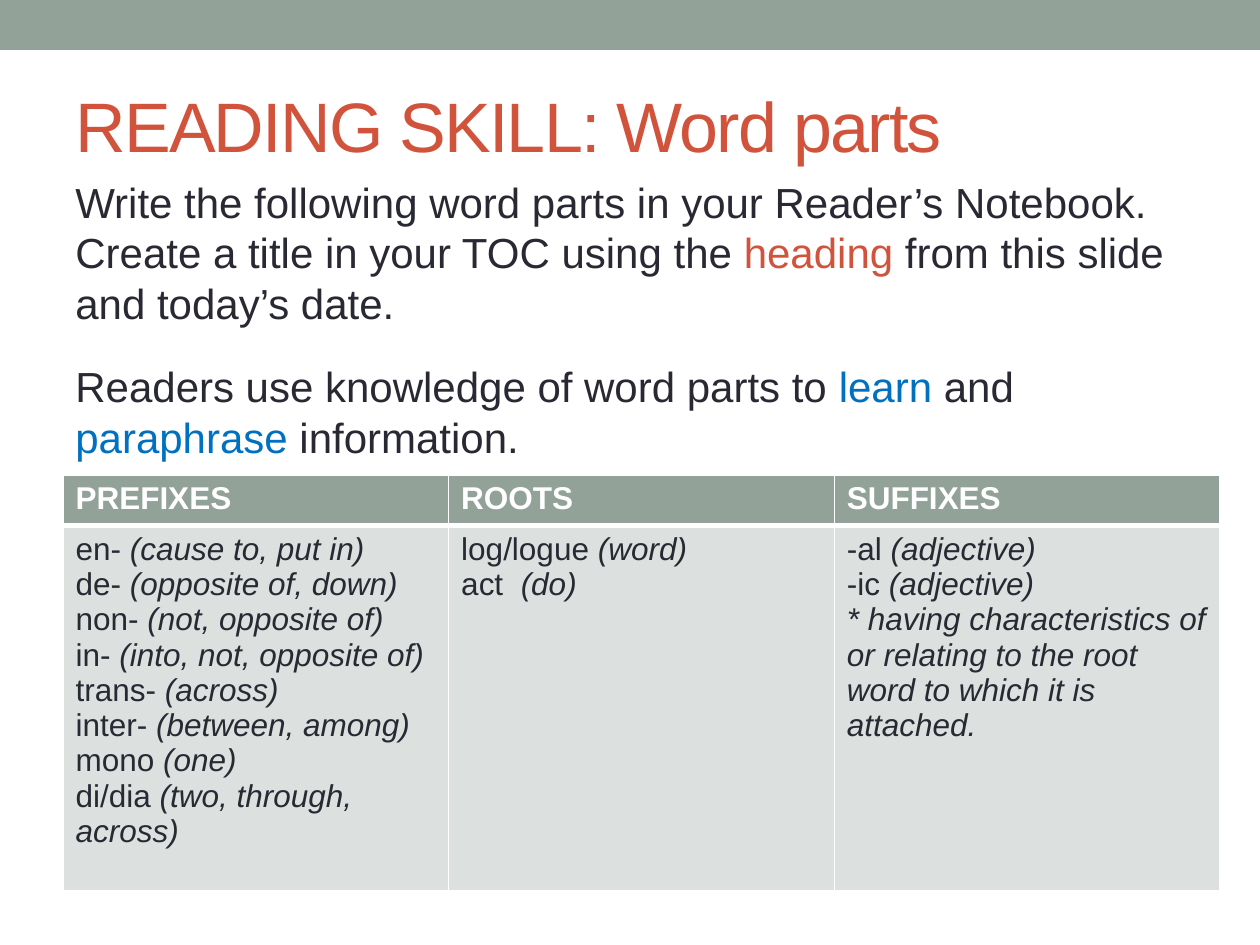
from lxml import etree
from pptx import Presentation
from pptx import util as u
from pptx.dml.color import RGBColor
from pptx.enum import shapes, text
from pptx.oxml import ns

PX = 914400 / 126
SAGE = RGBColor(0x93, 0xA2, 0x99)
PALE = RGBColor(0xDC, 0xE0, 0xDE)
RED = RGBColor(0xD2, 0x53, 0x3C)
BLUE = RGBColor(0x00, 0x70, 0xC0)
INK = RGBColor(0x29, 0x29, 0x34)
WHITE = RGBColor(0xFF, 0xFF, 0xFF)

INTRO = [
    [("Write the following word parts in your Reader’s Notebook.  "
      "Create a title in your TOC using the ", INK),
     ("heading", RED), (" from this slide and today’s date.", INK)],
    [("Readers use knowledge of word parts to ", INK), ("learn", BLUE),
     (" and ", INK), ("paraphrase", BLUE), (" information.", INK)],
]
WORD_PARTS = {
    "PREFIXES": [
        ("en- ", "(cause to, put in)"),
        ("de- ", "(opposite of, down)"),
        ("non- ", "(not, opposite of)"),
        ("in- ", "(into, not, opposite of)"),
        ("trans- ", "(across)"),
        ("inter- ", "(between, among)"),
        ("mono ", "(one)"),
        ("di/dia ", "(two, through, across)"),
    ],
    "ROOTS": [("log/logue ", "(word)"), ("act  ", "(do)")],
    "SUFFIXES": [
        ("-al ", "(adjective)"),
        ("-ic ", "(adjective)"),
        ("", "* having characteristics of or relating to the root word "
             "to which it is attached."),
    ],
}


def px(*lengths):
    """Turn pixel lengths into EMU."""
    return [u.Emu(round(length * PX)) for length in lengths]


def add_span(para, words, size, color, bold=False, italic=False):
    """Append one formatted run to a paragraph."""
    span = para.add_run()
    span.text = words
    font = span.font
    font.name, font.size, font.bold, font.italic = "Arial", u.Pt(size), bold, italic
    font.color.rgb = color
    return span


def add_para(frame, index):
    """Return the first paragraph of a frame, or a new one after it."""
    return frame.add_paragraph() if index else frame.paragraphs[0]


def add_frame(page, box, anchor):
    """Add a wrapping text box and return its text frame."""
    frame = page.shapes.add_textbox(*px(*box)).text_frame
    frame.word_wrap = True
    frame.vertical_anchor = anchor
    return frame


def add_band(page, box):
    """Draw the plain band along the top edge."""
    band = page.shapes.add_shape(shapes.MSO_SHAPE.RECTANGLE, *px(*box))
    band.shadow.inherit = False
    band.fill.solid()
    band.fill.fore_color.rgb = SAGE
    band.line.fill.background()


def add_title(page, box):
    """Write the heading with slightly tightened letters."""
    frame = add_frame(page, box, text.MSO_ANCHOR.MIDDLE)
    span = add_span(frame.paragraphs[0], "READING SKILL: Word parts", 40, RED)
    span.font._element.set("spc", "-100")


def add_intro(page, box):
    """Write the instructions above the table."""
    frame = add_frame(page, box, text.MSO_ANCHOR.TOP)
    for index, spans in enumerate(INTRO):
        para = add_para(frame, index)
        if index:
            para.space_before = u.Pt(19)
        for words, color in spans:
            add_span(para, words, 24, color)


def style_cell(cell, fill, bottom):
    """Give a cell white borders and a solid fill."""
    props = cell._tc.get_or_add_tcPr()
    for side, points in (("L", 1), ("R", 1), ("T", 1), ("B", bottom)):
        line = etree.SubElement(props, ns.qn(f"a:ln{side}"), w=str(u.Pt(points)))
        solid = etree.SubElement(line, ns.qn("a:solidFill"))
        etree.SubElement(solid, ns.qn("a:srgbClr"), val=str(WHITE))
    cell.fill.solid()
    cell.fill.fore_color.rgb = fill


def add_word_table(page, box, header_height):
    """Build the table with one column for each kind of word part."""
    left, top, width, height = box
    columns = len(WORD_PARTS)
    table = page.shapes.add_table(2, columns, *px(*box)).table
    table.rows[0].height, table.rows[1].height = px(header_height, height - header_height)
    for index, (heading, entries) in enumerate(WORD_PARTS.items()):
        table.columns[index].width = px(width / columns)[0]
        header, body = table.cell(0, index), table.cell(1, index)
        style_cell(header, SAGE, 3)
        style_cell(body, PALE, 1)
        add_span(header.text_frame.paragraphs[0], heading, 18, WHITE, bold=True)
        for row, (part, meaning) in enumerate(entries):
            para = add_para(body.text_frame, row)
            if part:
                add_span(para, part, 18, INK)
            add_span(para, meaning, 18, INK, italic=True)


def main():
    """Build the slide and save the deck."""
    deck = Presentation()
    deck.slide_width, deck.slide_height = px(1260, 945)
    page = deck.slides.add_slide(deck.slide_layouts[6])
    add_band(page, (0, 0, 1260, 50))
    add_title(page, (63, 57, 1134, 136))
    add_intro(page, (63, 170, 1134, 672))
    add_word_table(page, (63, 475, 1157, 415), 50)
    deck.save("out.pptx")


if __name__ == "__main__":
    main()
